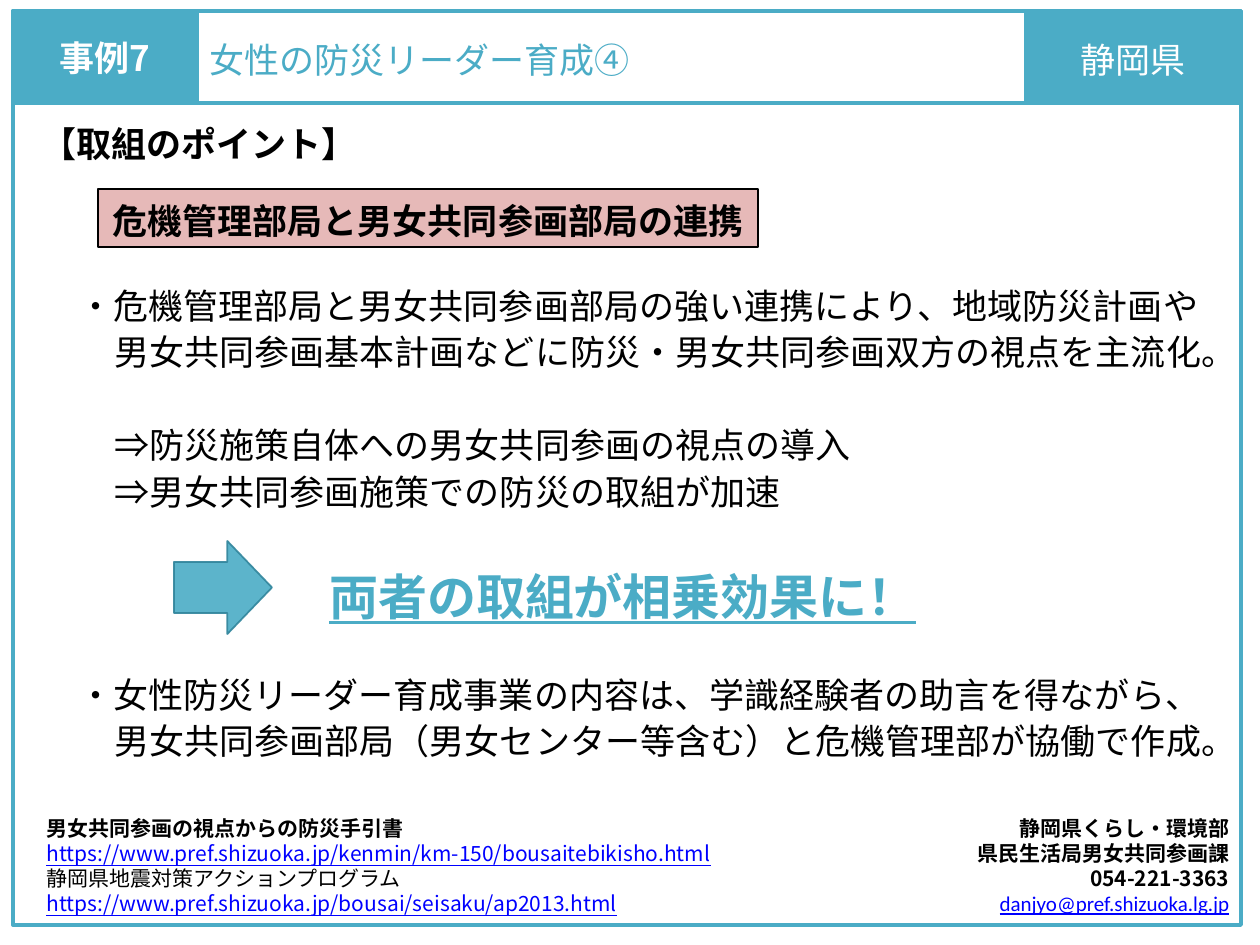
from dataclasses import dataclass

from lxml.etree import SubElement
from pptx import Presentation
from pptx.dml.color import RGBColor
from pptx.enum.shapes import MSO_SHAPE
from pptx.enum.text import MSO_ANCHOR, PP_ALIGN
from pptx.oxml.ns import qn
from pptx.util import Emu, Pt

SCALE = 914400 // 126  # EMU in one px


@dataclass(frozen=True)
class Theme:
    teal: str = "4BACC6"
    edge: str = "31859C"
    pink: str = "E6B9B8"
    black: str = "000000"
    white: str = "FFFFFF"
    link: str = "0000FF"
    font: str = "Noto Sans CJK JP"
    latin: str = "Calibri"
    small: int = 12
    body: int = 20
    big: int = 28
    thin: float = 1
    thick: float = 2.25


T = Theme()


def px(n):
    return Emu(n * SCALE)


def rgb(code):
    return RGBColor.from_string(code)


def style(para, size=T.body, color=T.black, bold=False, under=False,
          font=T.font, align=PP_ALIGN.LEFT):
    f = para.font
    f.size, f.bold, f.underline, f.name = Pt(size), bold, under, font
    f.color.rgb = rgb(color)
    east = SubElement(para._p.pPr.find(qn("a:defRPr")), qn("a:ea"))
    east.set("typeface", font)
    para.alignment = align


def indent(para, left, first):
    props = para._p.get_or_add_pPr()
    props.set("marL", str(px(left)))
    props.set("indent", str(px(first)))


def add_box(slide, area, fill=None, line=T.teal, width=T.thick,
            kind=MSO_SHAPE.RECTANGLE):
    box = slide.shapes.add_shape(kind, *map(px, area))
    box.shadow.inherit = False
    if fill:
        box.fill.solid()
        box.fill.fore_color.rgb = rgb(fill)
    else:
        box.fill.background()
    box.line.color.rgb = rgb(line)
    box.line.width = Pt(width)
    return box


def add_label(box, text, top=6, base=6, **look):
    frame = box.text_frame
    frame.vertical_anchor = MSO_ANCHOR.MIDDLE
    frame.margin_top, frame.margin_bottom = px(top), px(base)
    frame.paragraphs[0].text = text
    style(frame.paragraphs[0], **look)


def add_text(slide, area, rows):
    """Each row: text, line pitch in points, gap before in points,
    (left, first) indent in px, look."""
    frame = slide.shapes.add_textbox(*map(px, area)).text_frame
    frame.word_wrap = True
    for i, (text, pitch, gap, inset, look) in enumerate(rows):
        para = frame.add_paragraph() if i else frame.paragraphs[0]
        para.text = text
        style(para, **look)
        para.line_spacing = Pt(pitch)
        para.space_before = Pt(gap)
        indent(para, *inset)


def add_notes(slide, area, rows, **shared):
    add_text(slide, area, [
        (text, 14.3, 0, (0, 0), {"size": T.small, **shared, **look})
        for text, look in rows])


def add_arrow(slide, area):
    arrow = add_box(slide, area, T.teal, T.edge, T.thin, MSO_SHAPE.RIGHT_ARROW)
    arrow.adjustments[0] = 0.55
    arrow.adjustments[1] = 0.48
    for color in arrow._element.spPr.iter(qn("a:srgbClr")):
        SubElement(color, qn("a:alpha")).set("val", "90000")


def main():
    deck = Presentation()
    deck.slide_width, deck.slide_height = px(1260), px(945)
    slide = deck.slides.add_slide(deck.slide_layouts[6])
    bold, center = {"bold": True}, {"align": PP_ALIGN.CENTER}
    link = {"color": T.link, "under": True}

    # Main points
    pitch, hang, flush = 26.5, (36, -36), (36, 0)
    add_text(slide, (66, 274, 1160, 490), [
        ("・危機管理部局と男女共同参画部局の強い連携により、地域防災計画や"
         "男女共同参画基本計画などに防災・男女共同参画双方の視点を主流化。",
         pitch, 0, hang, {}),
        ("⇒防災施策自体への男女共同参画の視点の導入", pitch, pitch, flush, {}),
        ("⇒男女共同参画施策での防災の取組が加速", pitch, 0, flush, {}),
        ("両者の取組が相乗効果に！", 37, 27.5, (251, 0),
         {"size": T.big, "color": T.teal, "bold": True, "under": True}),
        ("・女性防災リーダー育成事業の内容は、学識経験者の助言を得ながら、"
         "男女共同参画部局（男女センター等含む）と危機管理部が協働で作成。",
         pitch, 25, hang, {}),
    ])
    add_text(slide, (29, 112, 1160, 59),
             [("【取組のポイント】", pitch, 0, (0, 0), bold)])

    # Key message and arrow
    key = add_box(slide, (98, 189, 660, 58), T.pink, T.black, T.thin)
    add_label(key, "危機管理部局と男女共同参画部局の連携", 5, 0, **bold, **center)
    add_arrow(slide, (174, 541, 98, 93))

    # Contact and sources
    add_notes(slide, (835, 810, 407, 115), [
        ("静岡県くらし・環境部", bold),
        ("県民生活局男女共同参画課", bold),
        ("054-221-3363", bold),
        ("danjyo@pref.shizuoka.lg.jp", {**link, "font": T.latin}),
    ], align=PP_ALIGN.RIGHT)
    add_notes(slide, (34, 810, 837, 115), [
        ("男女共同参画の視点からの防災手引書", bold),
        ("https://www.pref.shizuoka.jp/kenmin/km-150/bousaitebikisho.html", link),
        ("静岡県地震対策アクションプログラム", {}),
        ("https://www.pref.shizuoka.jp/bousai/seisaku/ap2013.html", link),
    ])

    # Frame and header
    left, top, high = 13, 11, 92
    add_box(slide, (left, top, 1228, 914))
    case = add_box(slide, (left, top, 184, high), T.teal)
    add_label(case, "事例7", color=T.white, **bold, **center)
    title = add_box(slide, (197, top, 1044, high))
    add_label(title, "女性の防災リーダー育成④", 10, color=T.teal)
    place = add_box(slide, (1026, top, 215, high), T.teal)
    add_label(place, "静岡県", 10, color=T.white, **center)

    deck.save("out.pptx")


if __name__ == "__main__":
    main()
